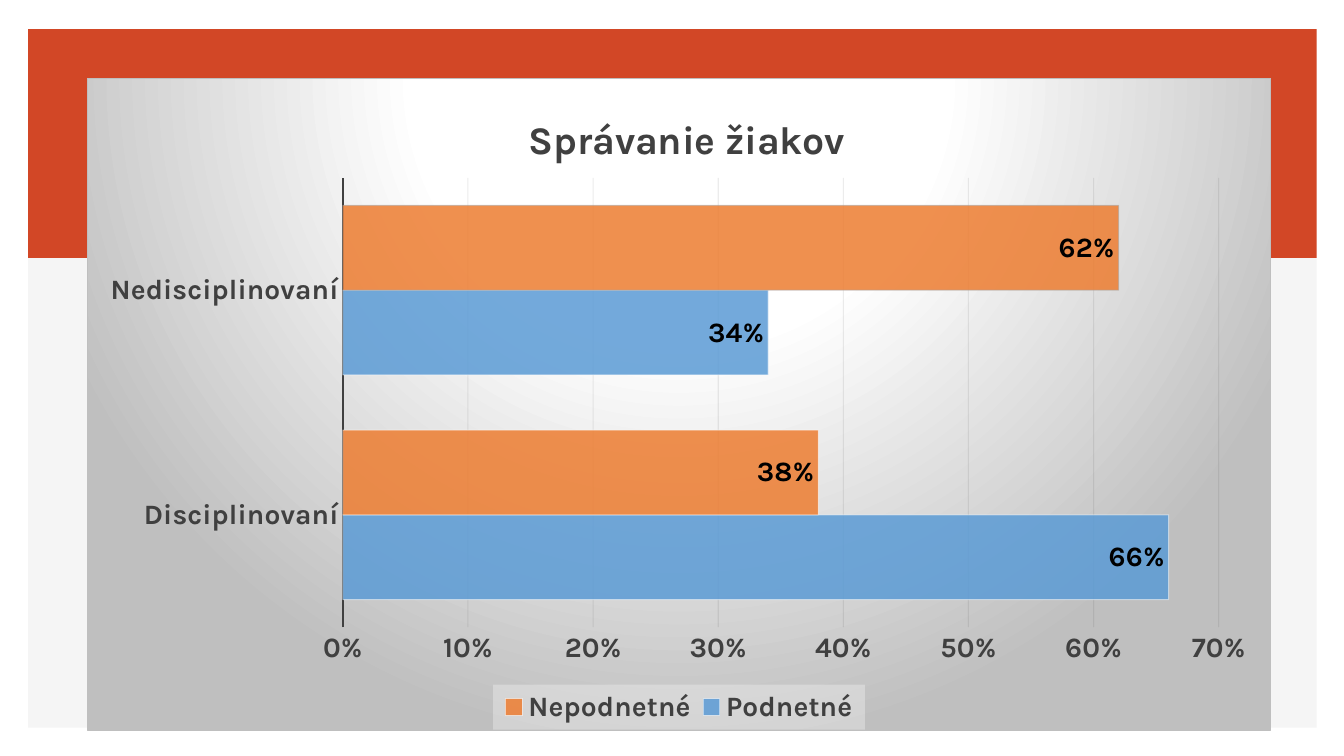
import pptx
import pptx.chart.data
import pptx.dml.color
import pptx.enum.chart
import pptx.enum.shapes
import pptx.oxml
import pptx.oxml.ns
import pptx.util

TITLE = "Správanie žiakov"
GROUPS = ["Disciplinovaní", "Nedisciplinovaní"]
ANSWERS = {"Podnetné": (0.66, 0.34), "Nepodnetné": (0.38, 0.62)}
OUTLINED = ("Nepodnetné", 1)

THEME = {
    "font": "Karla",
    "title_size": 28,
    "label_size": 20,
    "base_size": 10,
    "text": "404040",
    "value": "000000",
    "panel": "F5F5F5",
    "band": "D24726",
    "border": "BFBFBF",
    "grid": "0D0D0D",
    "legend": "F2F2F2",
    "bar_edge": "FFFFFF",
    "point_edge": "A6A6A6",
    "bars": {"Podnetné": "5B9BD5", "Nepodnetné": "ED7D31"},
    "glow": [(0, "FFFFFF"), (39, "FFFFFF"), (100, "BFBFBF")],
}
SLIDE = (13.33, 7.5)
PANELS = [("panel", (0.28, 0.29, 12.78, 6.93)), ("band", (0.28, 0.29, 12.78, 2.27))]
CHART = (0.86, 0.77, 11.75, 6.48)
PLOT_SHARE = (0.216, 0.153, 0.74, 0.689)
TITLE_SHARE = (0.367, 0.045)
LEGEND_SHARE = (0.343, 0.93, 0.314, 0.069)

NS = pptx.oxml.ns.nsdecls("a", "c")
qn = pptx.oxml.ns.qn


def inches(lengths):
    return [pptx.util.Inches(length) for length in lengths]


def color(code):
    return pptx.dml.color.RGBColor.from_string(code)


def set_font(font, size, code, bold=True):
    values = {"name": THEME["font"], "size": pptx.util.Pt(size), "bold": bold}
    for field, value in values.items():
        setattr(font, field, value)
    font.color.rgb = color(code)


def paint(fill, code, opacity=100):
    fill.solid()
    fill.fore_color.rgb = color(code)
    if opacity < 100:
        tone = fill._xPr.find(qn("a:solidFill"))[0]
        tone.append(pptx.oxml.parse_xml(f'<a:alpha {NS} val="{opacity * 1000}"/>'))


def stroke(line, code, opacity=100):
    line.width = pptx.util.Pt(0.75)
    paint(line.fill, code, opacity)


def layout(share, inner=False):
    names = ("x", "y", "w", "h")[:len(share)]
    target = '<c:layoutTarget val="inner"/>' if inner else ""
    modes = "".join(f'<c:{name}Mode val="edge"/>' for name in names[:2])
    sizes = "".join(f'<c:{name} val="{part}"/>' for name, part in zip(names, share))
    return pptx.oxml.parse_xml(
        f"<c:layout {NS}><c:manualLayout>{target}{modes}{sizes}</c:manualLayout></c:layout>")


def place(parent, share, after=None, inner=False):
    for old in parent.findall(qn("c:layout")):
        parent.remove(old)
    if after:
        parent.find(qn(after)).addnext(layout(share, inner))
    else:
        parent.insert(0, layout(share, inner))


def draw_chart(slide):
    data = pptx.chart.data.CategoryChartData(number_format="0%")
    data.categories = GROUPS
    for answer, shares in ANSWERS.items():
        data.add_series(answer, shares)
    chart = slide.shapes.add_chart(
        pptx.enum.chart.XL_CHART_TYPE.BAR_CLUSTERED, *inches(CHART), data).chart
    set_font(chart.font, THEME["base_size"], THEME["value"], False)

    chart.has_title = True
    heading = chart.chart_title.text_frame
    heading.text = TITLE
    set_font(heading.paragraphs[0].runs[0].font, THEME["title_size"], THEME["text"])
    chart.chart_title.include_in_layout = False
    place(chart.chart_title._element, TITLE_SHARE, "c:tx")
    place(chart._chartSpace.chart.plotArea, PLOT_SHARE, inner=True)
    return chart


def style_axes(chart):
    scale = {"minimum_scale": 0, "maximum_scale": 0.7, "major_unit": 0.1,
             "has_major_gridlines": True}
    for field, value in scale.items():
        setattr(chart.value_axis, field, value)
    for axis in (chart.category_axis, chart.value_axis):
        axis.major_tick_mark = pptx.enum.chart.XL_TICK_MARK.NONE
        set_font(axis.tick_labels.font, THEME["label_size"], THEME["text"])
    chart.value_axis.tick_labels.number_format = "0%"
    chart.value_axis.tick_labels.number_format_is_linked = False
    chart.value_axis.format.line.fill.background()
    stroke(chart.value_axis.major_gridlines.format.line, THEME["grid"], 8)
    stroke(chart.category_axis.format.line, THEME["text"])
    chart.category_axis.format.line.width = pptx.util.Pt(1.5)


def style_bars(chart):
    bars = chart.plots[0]
    for field, value in {"gap_width": 65, "overlap": 0, "vary_by_categories": False}.items():
        setattr(bars, field, value)
    label_format = {"show_value": True, "number_format": "0%",
                    "number_format_is_linked": False,
                    "position": pptx.enum.chart.XL_LABEL_POSITION.INSIDE_END}
    for answer in bars.series:
        answer.invert_if_negative = False
        paint(answer.format.fill, THEME["bars"][answer.name], 85)
        stroke(answer.format.line, THEME["bar_edge"], 50)
        for field, value in label_format.items():
            setattr(answer.data_labels, field, value)
        set_font(answer.data_labels.font, THEME["label_size"], THEME["value"])
        if answer.name == OUTLINED[0]:
            outlined = answer.points[OUTLINED[1]].format
            paint(outlined.fill, THEME["bars"][answer.name], 85)
            stroke(outlined.line, THEME["point_edge"])


def style_legend(chart):
    chart.has_legend = True
    legend = chart.legend
    legend.position = pptx.enum.chart.XL_LEGEND_POSITION.BOTTOM
    legend.include_in_layout = False
    set_font(legend.font, THEME["label_size"], THEME["text"])
    place(legend._element, LEGEND_SHARE, "c:legendPos")
    legend._element.find(qn("c:txPr")).addprevious(pptx.oxml.parse_xml(
        f'<c:spPr {NS}><a:solidFill><a:srgbClr val="{THEME["legend"]}">'
        '<a:alpha val="39000"/></a:srgbClr></a:solidFill></c:spPr>'))


def style_backdrop(chart):
    stops = "".join(f'<a:gs pos="{share * 1000}"><a:srgbClr val="{code}"/></a:gs>'
                    for share, code in THEME["glow"])
    chart._chartSpace.chart.addnext(pptx.oxml.parse_xml(
        f'<c:spPr {NS}><a:gradFill><a:gsLst>{stops}</a:gsLst><a:path path="circle">'
        '<a:fillToRect l="50000" t="-80000" r="50000" b="180000"/></a:path></a:gradFill>'
        f'<a:ln w="9525"><a:solidFill><a:srgbClr val="{THEME["border"]}"/></a:solidFill>'
        '</a:ln></c:spPr>'))


def main():
    deck = pptx.Presentation()
    deck.slide_width, deck.slide_height = inches(SLIDE)
    slide = deck.slides.add_slide(deck.slide_layouts[6])
    for role, box in PANELS:
        panel = slide.shapes.add_shape(
            pptx.enum.shapes.MSO_SHAPE.RECTANGLE, *inches(box))
        panel.shadow.inherit = False
        paint(panel.fill, THEME[role])
        panel.line.fill.background()
    chart = draw_chart(slide)
    for style in (style_axes, style_bars, style_legend, style_backdrop):
        style(chart)
    deck.save("out.pptx")


if __name__ == "__main__":
    main()
